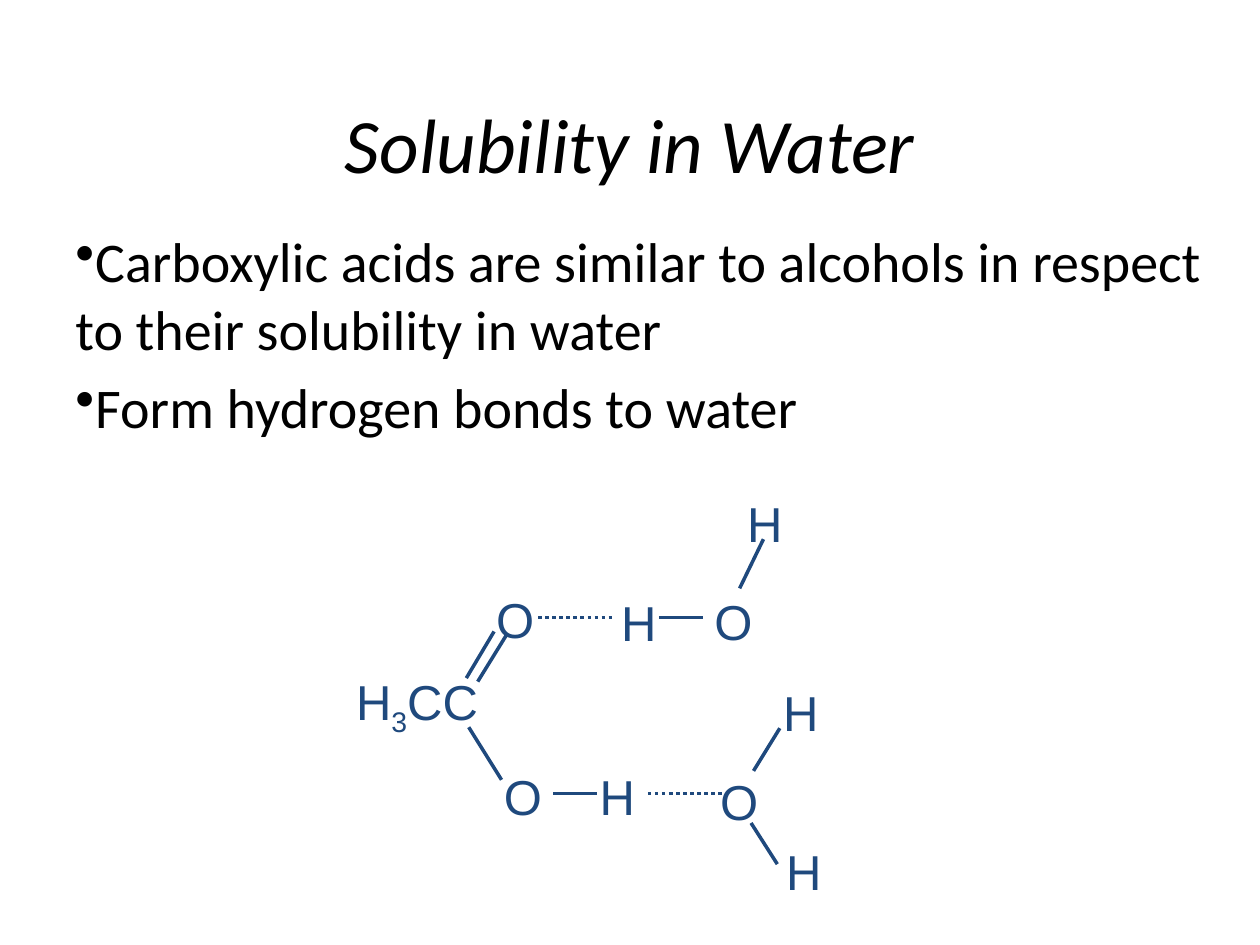
from lxml.etree import SubElement
from pptx import Presentation
from pptx.dml.color import RGBColor
from pptx.enum.dml import MSO_LINE
from pptx.enum.shapes import MSO_CONNECTOR
from pptx.enum.text import MSO_ANCHOR, PP_ALIGN
from pptx.oxml.ns import qn
from pptx.util import Cm, Pt

TITLE = "Solubility in Water"
POINTS = [
    "Carboxylic acids are similar to alcohols in respect to their solubility in water",
    "Form hydrogen bonds to water",
]
BLACK, BLUE = "000000", "1F497D"

ATOM_WIDTHS = {"H": 1.22, "O": 1.27, "H3CC": 3.02}
ATOM_HEIGHT = 1.52
ATOMS = [
    ("H3CC", 6.93, 13.49),
    ("O", 9.75, 11.68),
    ("H", 12.27, 11.73),
    ("O", 14.15, 11.71),
    ("H", 14.81, 9.75),
    ("O", 9.91, 15.24),
    ("H", 11.84, 15.24),
    ("O", 14.27, 15.34),
    ("H", 15.54, 13.56),
    ("H", 15.6, 16.76),
]
COVALENT_BONDS = [
    (9.45, 14.66, 10.11, 15.72),
    (9.96, 12.73, 9.4, 13.67),
    (10.21, 12.8, 9.63, 13.74),
    (11.15, 16, 12.04, 16),
    (13.28, 12.45, 14.17, 12.45),
    (14.91, 11.86, 15.39, 10.87),
    (15.19, 15.54, 15.72, 14.68),
    (15.14, 16.59, 15.67, 17.42),
]
HYDROGEN_BONDS = [
    (10.85, 12.45, 12.37, 12.45),
    (13.06, 16, 14.58, 16),
]


def color(value):
    return RGBColor.from_string(value)


def add_box(page, left, top, width, height, wrap=True):
    box = page.shapes.add_textbox(Cm(left), Cm(top), Cm(width), Cm(height))
    box.text_frame.word_wrap = wrap
    return box.text_frame


def set_font(para, name, size, value):
    para.font.name = name
    para.font.size = Pt(size)
    para.font.color.rgb = color(value)


def add_title(page):
    frame = add_box(page, 1.27, 0.76, 22.86, 3.18)
    frame.vertical_anchor = MSO_ANCHOR.BOTTOM
    para = frame.paragraphs[0]
    para.text = TITLE
    para.alignment = PP_ALIGN.CENTER
    para.line_spacing = Pt(36)
    set_font(para, "Calibri", 44, BLACK)
    para.font.italic = True


def add_points(page):
    frame = add_box(page, 1.27, 4.45, 23.62, 12.37)
    for index, text in enumerate(POINTS):
        para = frame.add_paragraph() if index else frame.paragraphs[0]
        para.text = text
        para.space_before = Pt(6.4)
        set_font(para, "Calibri", 32, BLACK)
        properties = para._p.get_or_add_pPr()
        bullet = SubElement(properties, qn("a:buChar"), char="•")
        properties.remove(bullet)
        properties.find(qn("a:defRPr")).addprevious(bullet)


def add_atom(page, formula, left, top):
    frame = add_box(page, left, top, ATOM_WIDTHS[formula], ATOM_HEIGHT, wrap=False)
    para = frame.paragraphs[0]
    para.line_spacing = Pt(36)
    set_font(para, "Arial", 28, BLUE)
    for part in formula.replace("3", " 3 ").split():
        span = para.add_run()
        span.text = part
        if part.isdigit():
            span._r.get_or_add_rPr().set("baseline", "-25000")


def add_bond(page, ends, dash=None):
    bond = page.shapes.add_connector(MSO_CONNECTOR.STRAIGHT, *map(Cm, ends))
    bond.line.color.rgb = color(BLUE)
    bond.line.width = Pt(2)
    if dash:
        bond.line.dash_style = dash
    SubElement(bond._element.spPr, qn("a:effectLst"))


def main():
    deck = Presentation()
    deck.slide_width, deck.slide_height = Cm(25.4), Cm(19.05)
    page = deck.slides.add_slide(deck.slide_layouts[6])
    for atom in ATOMS:
        add_atom(page, *atom)
    for ends in COVALENT_BONDS:
        add_bond(page, ends)
    for ends in HYDROGEN_BONDS:
        add_bond(page, ends, MSO_LINE.ROUND_DOT)
    add_title(page)
    add_points(page)
    deck.save("out.pptx")


if __name__ == "__main__":
    main()
